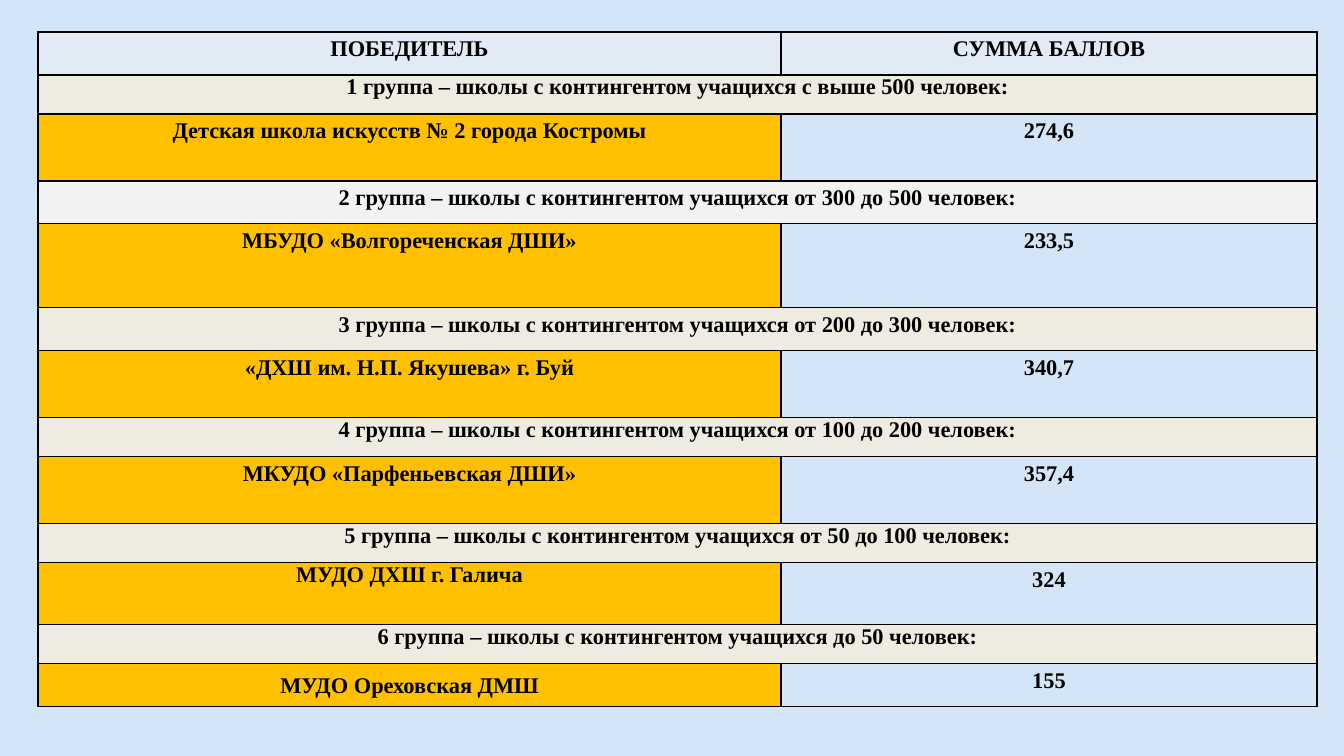
from dataclasses import dataclass

from lxml.etree import SubElement
from pptx import Presentation
from pptx.dml.color import RGBColor
from pptx.enum.text import PP_ALIGN
from pptx.oxml.ns import qn
from pptx.util import Pt

EMU_PER_PX = 914400 / 100.8


@dataclass(frozen=True)
class Theme:
    background: str = "D4E5F7"
    ink: str = "000000"
    header: str = "E0EBF6"
    group: str = "EEECE1"
    group_light: str = "F2F2F2"
    winner: str = "FFC000"
    font: str = "Times New Roman"
    gap_font: str = "Calibri"
    size: int = 16
    gap_size: int = 18
    border: int = 1
    loose: float = 1.2
    tight: float = 1.0


THEME = Theme()


def px(length):
    return round(length * EMU_PER_PX)


def add_span(para, text, *, font=THEME.font, size=THEME.size, color=THEME.ink, bold=True):
    span = para.add_run()
    span.text = text
    span.font.name = font
    span.font.size = Pt(size)
    span.font.bold = bold
    span.font.color.rgb = RGBColor.from_string(color)


class SlideBuilder:
    def __init__(self, deck, theme):
        self.theme = theme
        self.page = deck.slides.add_slide(deck.slide_layouts[6])
        fill = self.page.background.fill
        fill.solid()
        fill.fore_color.rgb = RGBColor.from_string(theme.background)

    def table(self, left, top, widths, heights):
        frame = self.page.shapes.add_table(
            len(heights), len(widths), px(left), px(top), px(sum(widths)), px(sum(heights)))
        table = frame.table
        table.first_row = table.horz_banding = False
        for column, width in zip(table.columns, widths):
            column.width = px(width)
        for row, height in zip(table.rows, heights):
            row.height = px(height)
        for cell in table.iter_cells():
            self.borders(cell)
        return table

    def borders(self, cell):
        properties = cell._tc.get_or_add_tcPr()
        for side in ("lnL", "lnR", "lnT", "lnB"):
            line = SubElement(properties, qn(f"a:{side}"), w=str(Pt(self.theme.border)))
            solid = SubElement(line, qn("a:solidFill"))
            SubElement(solid, qn("a:srgbClr"), val=self.theme.ink)

    def cell(self, cell, text, *, fill=None, spacing=THEME.loose):
        cell.margin_left = cell.margin_right = cell.margin_bottom = px(4)
        cell.margin_top = 0
        if fill:
            cell.fill.solid()
            cell.fill.fore_color.rgb = RGBColor.from_string(fill)
        else:
            cell.fill.background()
        para = cell.text_frame.paragraphs[0]
        para.alignment = PP_ALIGN.CENTER
        para.line_spacing = spacing
        # A tuple of words is joined by a wider gap
        words = text if isinstance(text, tuple) else (text,)
        for index, word in enumerate(words):
            if index:
                add_span(para, " ", font=self.theme.gap_font, size=self.theme.gap_size)
            add_span(para, word)


# Each group: range of pupils, heading fill, heading spacing, winner, winner spacing, score
GROUPS = [
    ("с выше 500", THEME.group, THEME.tight,
     "Детская школа искусств № 2 города Костромы", THEME.loose, "274,6"),
    ("от 300 до 500", THEME.group_light, THEME.loose,
     "МБУДО «Волгореченская ДШИ»", THEME.loose, "233,5"),
    ("от 200 до 300", THEME.group, THEME.loose,
     "«ДХШ им. Н.П. Якушева» г. Буй", THEME.loose, "340,7"),
    ("от 100 до 200", THEME.group, THEME.tight,
     "МКУДО «Парфеньевская ДШИ»", THEME.loose, "357,4"),
    ("от 50 до 100", THEME.group, THEME.tight,
     "МУДО ДХШ г. Галича", THEME.tight, "324"),
    ("до 50", THEME.group, THEME.tight,
     ("МУДО", "Ореховская ДМШ"), THEME.loose, "155"),
]
COLUMN_WIDTHS = [743, 536]
ROW_HEIGHTS = [43, 39, 67, 43, 84, 43, 67, 39, 67, 39, 62, 39, 43]


def main():
    deck = Presentation()
    deck.slide_width, deck.slide_height = px(1344), px(756)
    builder = SlideBuilder(deck, THEME)
    table = builder.table(38, 32, COLUMN_WIDTHS, ROW_HEIGHTS)

    # Header row
    for column, title in enumerate(("ПОБЕДИТЕЛЬ", "СУММА БАЛЛОВ")):
        builder.cell(table.cell(0, column), title, fill=THEME.header)

    # A merged heading row and a result row for each group
    for number, group in enumerate(GROUPS, start=1):
        pupils, fill, heading_spacing, winner, winner_spacing, score = group
        result_row = 2 * number
        heading = table.cell(result_row - 1, 0)
        heading.merge(table.cell(result_row - 1, 1))
        builder.cell(heading, f"{number} группа – школы с контингентом учащихся {pupils} человек:",
                     fill=fill, spacing=heading_spacing)
        builder.cell(table.cell(result_row, 0), winner,
                     fill=THEME.winner, spacing=winner_spacing)
        builder.cell(table.cell(result_row, 1), score)

    deck.save("out.pptx")


if __name__ == "__main__":
    main()
